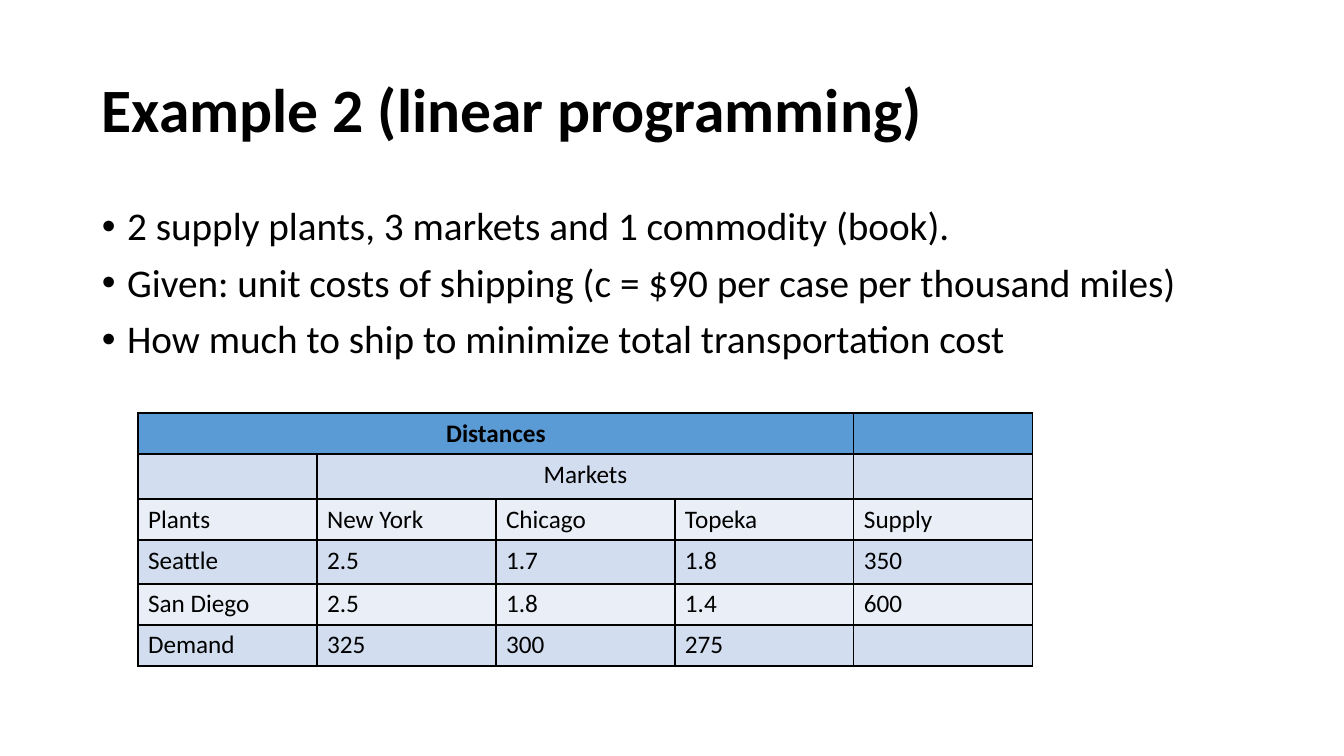
from dataclasses import dataclass

from lxml import etree
from pptx import Presentation
from pptx import util as u
from pptx.dml.color import RGBColor
from pptx.enum import text as t
from pptx.oxml import ns

SCALE = 914400 / 100.8
FONT = "Calibri"
BLACK = "000000"
HEAD, DARK, PALE = "5B9BD5", "D2DEEF", "EAEFF7"


@dataclass
class Box:
    left: int
    top: int
    width: int
    height: int
    lines: list[str]
    size: int
    anchor: t.MSO_ANCHOR
    bold: bool = False
    bullet: bool = False


@dataclass
class Row:
    height: int
    fill: str
    cells: list[str]
    span: tuple[int, int] | None = None
    bold: bool = False


BOXES = [
    Box(92, 40, 1159, 146, ["Example 2 (linear programming)"], 44,
        t.MSO_ANCHOR.MIDDLE, bold=True),
    Box(92, 202, 1159, 480, [
        "2 supply plants, 3 markets and 1 commodity (book).",
        "Given: unit costs of shipping (c = $90 per case per thousand miles)",
        "How much to ship to minimize total transportation cost",
    ], 28, t.MSO_ANCHOR.TOP, bullet=True),
]

# A span gives the first and last column of a merged, centred cell
ROWS = [
    Row(41, HEAD, ["Distances", "", "", "", ""], (0, 3), True),
    Row(45, DARK, ["", "Markets", "", "", ""], (1, 3)),
    Row(41, PALE, ["Plants", "New York", "Chicago", "Topeka", "Supply"]),
    Row(44, DARK, ["Seattle", "2.5", "1.7", "1.8", "350"]),
    Row(41, PALE, ["San Diego", "2.5", "1.8", "1.4", "600"]),
    Row(41, DARK, ["Demand", "325", "300", "275", ""]),
]
COLS, COL = 5, 179


def px(n: int) -> u.Emu:
    return u.Emu(round(n * SCALE))


def rgb(code: str) -> RGBColor:
    return RGBColor.from_string(code)


def style(para, size: int, bold: bool) -> None:
    for run in para.runs:
        font = run.font
        font.name, font.size, font.bold = FONT, u.Pt(size), bold
        font.color.rgb = rgb(BLACK)


def add_bullet(para) -> None:
    para.space_before = u.Pt(10)
    props = para._p.get_or_add_pPr()
    props.set("marL", str(u.Inches(0.25)))
    props.set("indent", str(-u.Inches(0.25)))
    etree.SubElement(props, ns.qn("a:buFont")).set("typeface", "Arial")
    etree.SubElement(props, ns.qn("a:buChar")).set("char", "•")


def add_box(slide, box: Box) -> None:
    shape = slide.shapes.add_textbox(
        px(box.left), px(box.top), px(box.width), px(box.height))
    frame = shape.text_frame
    frame.word_wrap = True
    frame.vertical_anchor = box.anchor
    frame.text = "\n".join(box.lines)
    for para in frame.paragraphs:
        para.line_spacing = 0.9
        if box.bullet:
            add_bullet(para)
        style(para, box.size, box.bold)


def add_edges(cell) -> None:
    props = cell._tc.get_or_add_tcPr()
    for side in ("lnL", "lnR", "lnT", "lnB"):
        line = etree.SubElement(props, ns.qn(f"a:{side}"), w=str(u.Pt(1)))
        fill = etree.SubElement(line, ns.qn("a:solidFill"))
        etree.SubElement(fill, ns.qn("a:srgbClr"), val=BLACK)


def add_grid(slide, left: int, top: int) -> None:
    high = sum(row.height for row in ROWS)
    grid = slide.shapes.add_table(
        len(ROWS), COLS, px(left), px(top), px(COLS * COL), px(high)).table
    grid.first_row = grid.horz_banding = False
    for col in grid.columns:
        col.width = px(COL)
    for r, row in enumerate(ROWS):
        grid.rows[r].height = px(row.height)
        for c, word in enumerate(row.cells):
            cell = grid.cell(r, c)
            add_edges(cell)
            cell.fill.solid()
            cell.fill.fore_color.rgb = rgb(row.fill)
            cell.text_frame.text = word
            style(cell.text_frame.paragraphs[0], 18, row.bold)
        if row.span:
            first, last = row.span
            cell = grid.cell(r, first)
            cell.merge(grid.cell(r, last))
            cell.text_frame.paragraphs[0].alignment = t.PP_ALIGN.CENTER


def main() -> None:
    deck = Presentation()
    deck.slide_width, deck.slide_height = px(1344), px(756)
    slide = deck.slides.add_slide(deck.slide_layouts[6])

    # Title and bullet list
    for box in BOXES:
        add_box(slide, box)

    # Table of distances
    add_grid(slide, 138, 413)

    deck.save("out.pptx")


if __name__ == "__main__":
    main()
